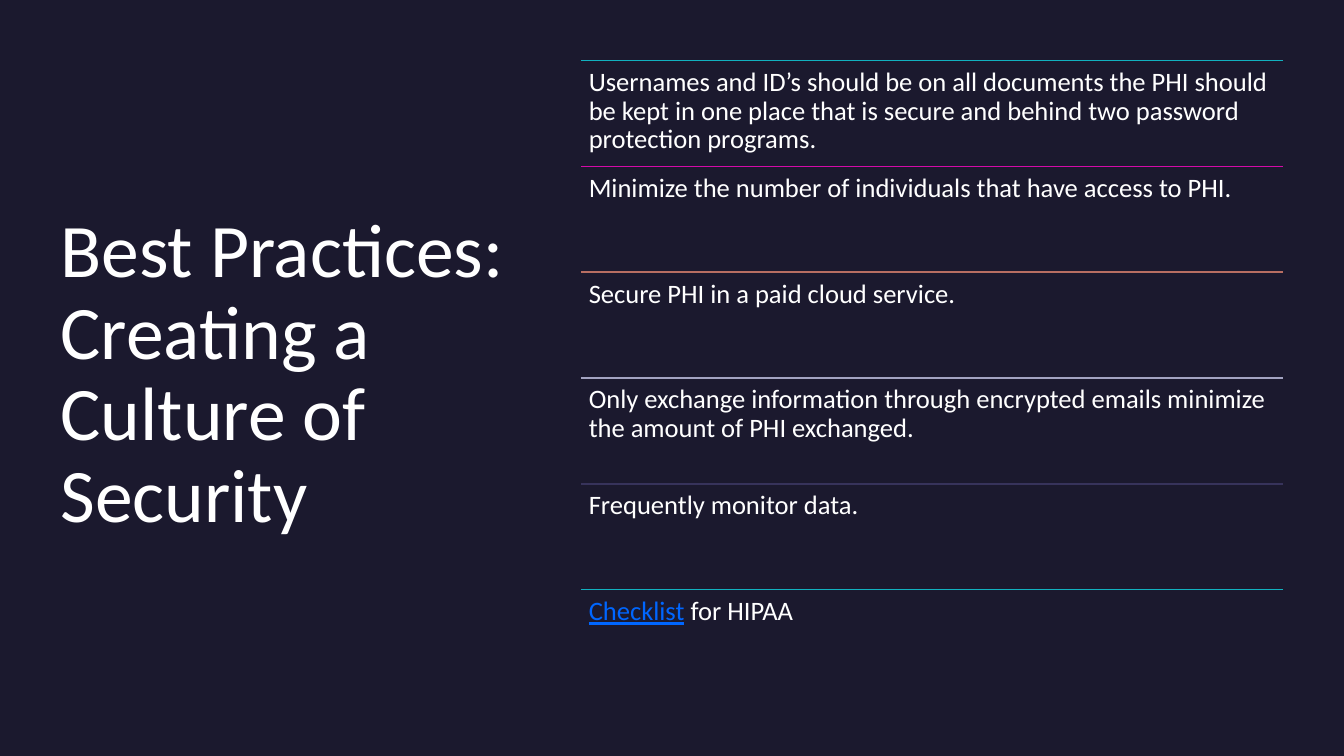
"""Build the slide on best practices for a culture of security."""
from dataclasses import dataclass

from pptx import Presentation
from pptx.dml.color import RGBColor
from pptx.enum.shapes import MSO_CONNECTOR
from pptx.enum.text import MSO_ANCHOR, MSO_AUTO_SIZE, PP_ALIGN
from pptx.oxml.ns import qn
from pptx.util import Pt
from lxml.etree import SubElement


@dataclass(frozen=True)
class Theme:
    font: str = "Calibri"
    title_size: int = 54
    body_size: int = 19
    background: str = "1B192E"
    text: str = "FFFFFF"
    link: str = "0066FF"
    teal: str = "12B1BF"
    magenta: str = "D40AA8"
    clay: str = "B86E62"
    lavender: str = "A3A3C1"
    indigo: str = "37335B"


THEME = Theme()
LIST_LEFT, LIST_TOP, LIST_WIDTH, ROW_HEIGHT = 414.9, 43.2, 501.8, 75.6
PRACTICES = [
    (THEME.teal, "Usernames and ID’s should be on all documents the PHI should be kept "
                 "in one place that is secure and behind two password protection programs."),
    (THEME.magenta, "Minimize the number of individuals that have access to PHI."),
    (THEME.clay, "Secure PHI in a paid cloud service."),
    (THEME.lavender, "Only exchange information through encrypted emails minimize "
                     "the amount of PHI exchanged."),
    (THEME.indigo, "Frequently monitor data."),
]


def rgb(color):
    return RGBColor.from_string(color)


def set_frame(tf, inset, anchor):
    tf.word_wrap = True
    tf.auto_size = MSO_AUTO_SIZE.NONE
    tf.vertical_anchor = anchor
    tf.margin_left = tf.margin_right = tf.margin_top = tf.margin_bottom = Pt(inset)


def set_paragraph(p, size):
    p.alignment = PP_ALIGN.LEFT
    p.line_spacing = 0.9
    p.font.name = THEME.font
    p.font.size = Pt(size)
    p.font.color.rgb = rgb(THEME.text)


def add_title(s, text):
    sp = s.shapes.title
    sp.left, sp.top, sp.width, sp.height = Pt(43.2), Pt(119.5), Pt(357.1), Pt(297.4)
    set_frame(sp.text_frame, 0, MSO_ANCHOR.MIDDLE)
    sp.text_frame.text = text
    set_paragraph(sp.text_frame.paragraphs[0], THEME.title_size)


def add_rule(s, top, color):
    line = s.shapes.add_connector(MSO_CONNECTOR.STRAIGHT, Pt(LIST_LEFT), Pt(top),
                                  Pt(LIST_LEFT + LIST_WIDTH), Pt(top))
    line.line.color.rgb = rgb(color)
    line.line.width = Pt(1)
    SubElement(line._element.spPr, qn("a:effectLst"))


def add_row(s, index, color, text=""):
    top = LIST_TOP + index * ROW_HEIGHT
    add_rule(s, top, color)
    sp = s.shapes.add_textbox(Pt(LIST_LEFT), Pt(top), Pt(LIST_WIDTH), Pt(ROW_HEIGHT))
    set_frame(sp.text_frame, 5.7, MSO_ANCHOR.TOP)
    p = sp.text_frame.paragraphs[0]
    set_paragraph(p, THEME.body_size)
    if text:
        p.add_run().text = text
    return p


def add_checklist_row(s, index):
    p = add_row(s, index, THEME.teal)
    r = p.add_run()
    r.text = "Checklist"
    r.font.underline = True
    r.font.color.rgb = rgb(THEME.link)
    p.add_run().text = " for HIPAA"


def main():
    prs = Presentation()
    prs.slide_width, prs.slide_height = Pt(960), Pt(540)
    s = prs.slides.add_slide(prs.slide_layouts[5])
    s.background.fill.solid()
    s.background.fill.fore_color.rgb = rgb(THEME.background)
    add_title(s, "Best Practices: Creating a Culture of Security")
    for index, (color, text) in enumerate(PRACTICES):
        add_row(s, index, color, text)
    add_checklist_row(s, len(PRACTICES))
    prs.save("out.pptx")


if __name__ == "__main__":
    main()
